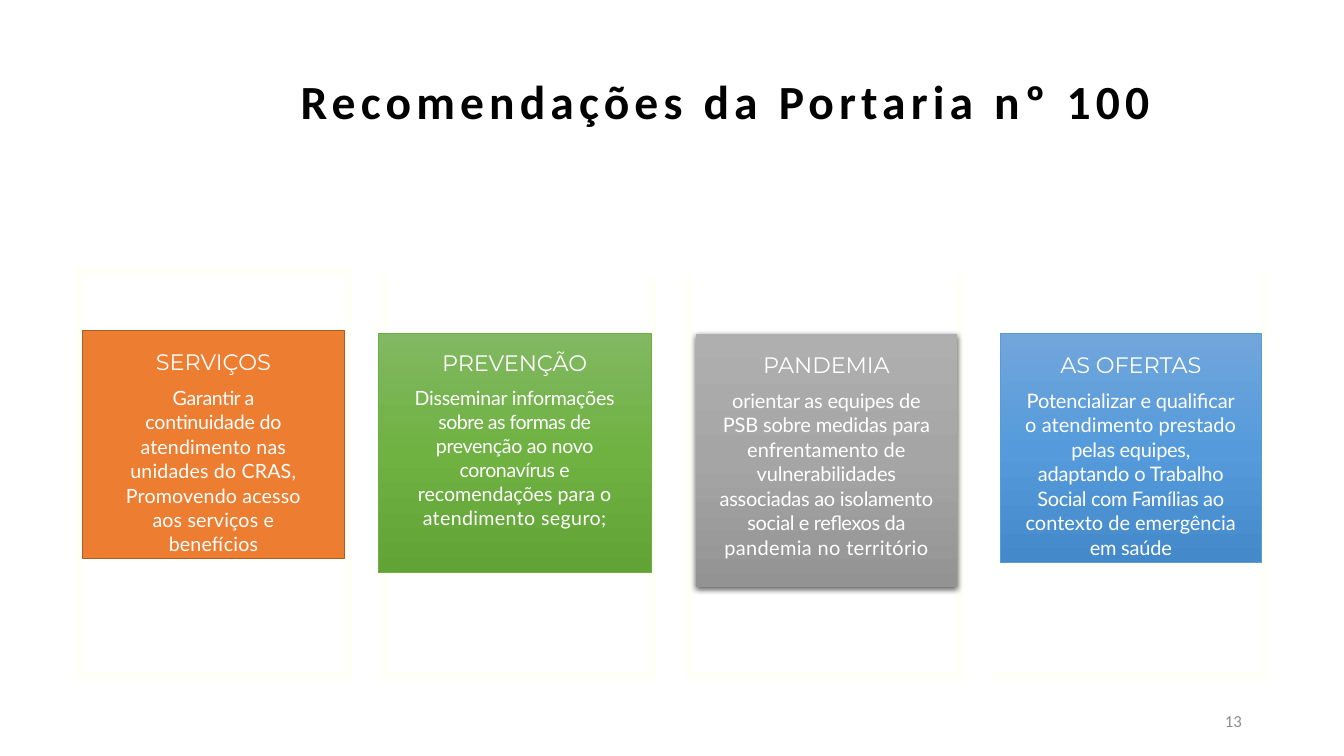
from copy import deepcopy

from lxml.etree import SubElement
from pptx import Presentation
from pptx.dml.color import RGBColor
from pptx.enum.shapes import MSO_SHAPE as Preset
from pptx.enum.text import MSO_ANCHOR as Anchor, MSO_AUTO_SIZE as AutoSize, PP_ALIGN as Align
from pptx.oxml.ns import qn
from pptx.util import Cm, Pt

BLACK = RGBColor(0x00, 0x00, 0x00)
WHITE = RGBColor(0xFF, 0xFF, 0xFF)
NUMBER_GRAY = RGBColor(0x8C, 0x8C, 0x8C)
FRAME_IVORY = RGBColor(0xFE, 0xFF, 0xF7)
ORANGE = RGBColor(0xED, 0x7D, 0x31)
DARK_ORANGE = RGBColor(0xAF, 0x5C, 0x24)
GREEN_LINE = RGBColor(0x70, 0xAD, 0x47)
BLUE_LINE = RGBColor(0x5B, 0x9B, 0xD5)
GREENS = [RGBColor(0x81, 0xB8, 0x61), RGBColor(0x6F, 0xB2, 0x42), RGBColor(0x62, 0xA3, 0x36)]
GRAYS = [RGBColor(0xAF, 0xAF, 0xAF), RGBColor(0xA5, 0xA5, 0xA5), RGBColor(0x93, 0x93, 0x93)]
BLUES = [RGBColor(0x71, 0xA6, 0xDB), RGBColor(0x55, 0x9B, 0xDB), RGBColor(0x44, 0x8A, 0xCA)]

# Each body line is paired with its letter spacing in points.
CARDS = [
    dict(heading="SERVIÇOS", box=(2.08, 8.33, 6.6, 5.74), colors=[ORANGE],
         line=(DARK_ORANGE, 1), inset=0.15, heading_pitch=Pt(27.5), size=14, pitch=1.04,
         body=[("Garantir a", -0.25), ("continuidade do", -0.15), ("atendimento nas", 0.1),
               ("unidades do CRAS,", 0.1), ("Promovendo acesso", 0.1),
               ("aos serviços e", 0.1), ("benefícios", 0.1)]),
    dict(heading="PREVENÇÃO", box=(9.53, 8.41, 6.88, 6.02), colors=GREENS,
         line=(GREEN_LINE, 0.5), inset=0.38, heading_pitch=1.0, size=14, pitch=1.02,
         body=[("Disseminar informações", -0.2), ("sobre as formas de", -0.4),
               ("prevenção ao novo", -0.25), ("coronavírus e", -0.35),
               ("recomendações para o", 0), ("atendimento seguro;", 0.25)]),
    dict(heading="PANDEMIA", box=(17.53, 8.41, 6.6, 6.38), colors=GRAYS,
         line=None, inset=0.15, heading_pitch=Pt(27.5), size=14.3, pitch=1.02,
         body=[("orientar as equipes de", -0.15), ("PSB sobre medidas para", -0.1),
               ("enfrentamento de", 0.05), ("vulnerabilidades", -0.1),
               ("associadas ao isolamento", -0.2), ("social e reflexos da", -0.25),
               ("pandemia no território", 0.25)]),
    dict(heading="AS OFERTAS", box=(25.2, 8.41, 6.6, 5.77), colors=BLUES,
         line=(BLUE_LINE, 0.5), inset=0.15, heading_pitch=Pt(27.5), size=14.3, pitch=1.02,
         body=[("Potencializar e qualificar", -0.1), ("o atendimento prestado", 0.05),
               ("pelas equipes,", -0.2), ("adaptando o Trabalho", -0.1),
               ("Social com Famílias ao", -0.25), ("contexto de emergência", 0),
               ("em saúde", -0.15)]),
]


def add_rectangle(left, top, width, height):
    shape = slide.shapes.add_shape(Preset.RECTANGLE, Cm(left), Cm(top), Cm(width), Cm(height))
    shape.shadow.inherit = False
    shape.line.fill.background()
    return shape


def format_run(run, font_name, size, color, spacing=0):
    run.font.name = font_name
    run.font.size = Pt(size)
    run.font.color.rgb = color
    if spacing:
        run.font._element.set("spc", str(round(spacing * 100)))


presentation = Presentation()
presentation.slide_width = Cm(33.87)
presentation.slide_height = Cm(19.05)
slide = presentation.slides.add_slide(presentation.slide_layouts[5])

# Title
title = slide.shapes.title
title.left, title.top, title.width, title.height = Cm(6.58), Cm(1.75), Cm(23.42), Cm(1.57)
title_frame = title.text_frame
title_frame.text = "Recomendações da Portaria nº 100"
title_frame.auto_size = AutoSize.NONE
title_frame.vertical_anchor = Anchor.MIDDLE
title_frame.margin_left = title_frame.margin_right = 0
title_frame.margin_top = title_frame.margin_bottom = 0
title_frame.paragraphs[0].alignment = Align.CENTER
title_run = title_frame.paragraphs[0].runs[0]
format_run(title_run, "Calibri", 34, BLACK, 3.7)
title_run.font.bold = True

# Pale frames behind the cards; only the first has a top edge
FRAME_TOP, FRAME_WIDTH, FRAME_HEIGHT, EDGE = 6.93, 6.95, 10.01, 0.18
for index in range(len(CARDS)):
    frame_left = 1.9 + 7.7 * index
    edges = [
        (frame_left, FRAME_TOP + FRAME_HEIGHT, FRAME_WIDTH, EDGE),
        (frame_left + FRAME_WIDTH - EDGE, FRAME_TOP, EDGE, FRAME_HEIGHT),
    ]
    if index < len(CARDS) - 1:
        edges.append((frame_left, FRAME_TOP, EDGE, FRAME_HEIGHT))
    if index == 0:
        edges.append((frame_left, FRAME_TOP - EDGE, FRAME_WIDTH, EDGE))
    for edge_box in edges:
        edge = add_rectangle(*edge_box)
        edge.fill.solid()
        edge.fill.fore_color.rgb = FRAME_IVORY

# Cards
for card in CARDS:
    shape = add_rectangle(*card["box"])
    properties = shape._element.spPr
    if len(card["colors"]) == 1:
        shape.fill.solid()
        shape.fill.fore_color.rgb = card["colors"][0]
    else:
        shape.fill.gradient()
        shape.fill.gradient_angle = 270
        stop_list = properties.find(".//" + qn("a:gsLst"))
        stop_list.append(deepcopy(stop_list[-1]))
        for stop, position, color in zip(shape.fill.gradient_stops, (0, 0.5, 1), card["colors"]):
            stop.position = position
            stop.color.rgb = color
    if card["line"]:
        line_color, line_width = card["line"]
        shape.line.color.rgb = line_color
        shape.line.width = Pt(line_width)
    else:
        shadow = SubElement(properties.find(qn("a:effectLst")), qn("a:outerShdw"),
                            blurRad=str(Pt(4.5)), dist=str(Pt(1.5)), dir="5400000",
                            algn="ctr", rotWithShape="0")
        shadow_color = SubElement(shadow, qn("a:srgbClr"), val=str(BLACK))
        SubElement(shadow_color, qn("a:alpha"), val="63000")

    text_frame = shape.text_frame
    text_frame.word_wrap = True
    text_frame.vertical_anchor = Anchor.TOP
    text_frame.margin_left = text_frame.margin_right = text_frame.margin_bottom = 0
    text_frame.margin_top = Cm(card["inset"])

    text_frame.text = card["heading"]
    heading = text_frame.paragraphs[0]
    heading.alignment = Align.CENTER
    heading.line_spacing = card["heading_pitch"]
    format_run(heading.runs[0], "Montserrat", 16, WHITE)

    body = text_frame.add_paragraph()
    body.text = "\v".join(words for words, spacing in card["body"])
    body.alignment = Align.CENTER
    body.line_spacing = card["pitch"]
    body.space_before = Pt(7)
    for run, (words, spacing) in zip(body.runs, card["body"]):
        format_run(run, "Lato", card["size"], WHITE, spacing)
    for line_break in body._p.findall(qn("a:br")):
        line_break.append(deepcopy(body.runs[0].font._element))

# Slide number
number_box = slide.shapes.add_textbox(Cm(23.93), Cm(17.65), Cm(7.62), Cm(1.02))
number_frame = number_box.text_frame
number_frame.word_wrap = True
number_frame.vertical_anchor = Anchor.MIDDLE
number_frame.text = "13"
number_frame.paragraphs[0].alignment = Align.RIGHT
format_run(number_frame.paragraphs[0].runs[0], "Calibri", 12, NUMBER_GRAY)

presentation.save("out.pptx")
